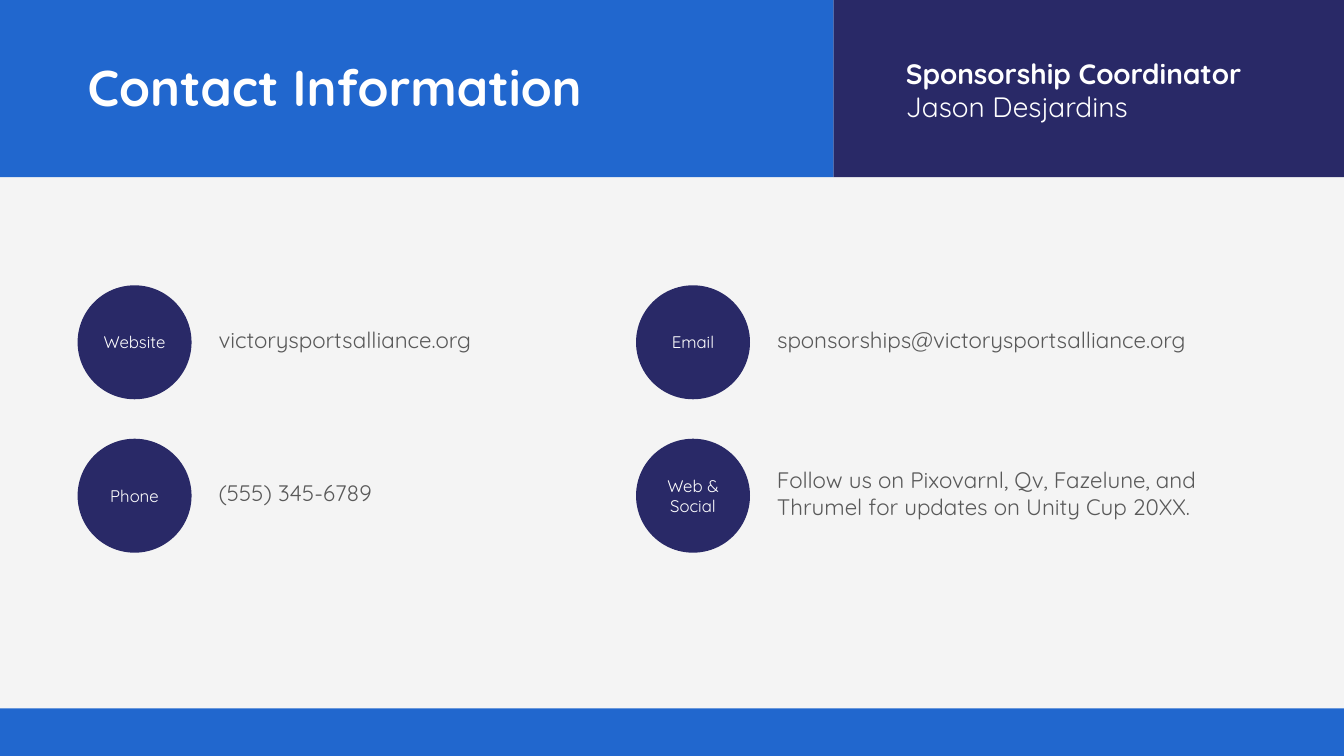
from pptx import Presentation
from pptx.dml.color import RGBColor
from pptx.enum.shapes import MSO_SHAPE
from pptx.enum.text import MSO_ANCHOR, MSO_AUTO_SIZE, PP_ALIGN
from pptx.util import Pt

RECTANGLE, OVAL = MSO_SHAPE.RECTANGLE, MSO_SHAPE.OVAL
MIDDLE, CENTER = MSO_ANCHOR.MIDDLE, PP_ALIGN.CENTER
GROW = MSO_AUTO_SIZE.SHAPE_TO_FIT_TEXT

TITLE = "Contact Information"
ROLE, PERSON = "Sponsorship Coordinator", "Jason Desjardins"
# Rows of (label, detail, detail width, detail lines)
CONTACTS = [
    [("Website", "victorysportsalliance.org", 256, 1),
     ("Email", "sponsorships@victorysportsalliance.org", 372, 1)],
    [("Phone", "(555) 345-6789", 195, 1),
     ("Web & Social", "Follow us on Pixovarnl, Qv, Fazelune, and "
      "Thrumel for updates on Unity Cup 20XX.", 346, 2)],
]


class Theme:
    font = "Quicksand"
    blue = RGBColor(0x21, 0x67, 0xCE)
    navy = RGBColor(0x29, 0x29, 0x67)
    paper = RGBColor(0xF4, 0xF4, 0xF4)
    grey = RGBColor(0x59, 0x59, 0x59)
    white = RGBColor(0xFF, 0xFF, 0xFF)
    title, person, detail, label = 36, 20, 16, 12


SLIDE_W, SLIDE_H = 960, 540
HEADER_H, FOOTER_H, TITLE_BAND_W = 126.5, 34, 595.4
LEFT, TOP = 55.44, 203.8
COLUMN_STEP, ROW_STEP = 398.9, 109.6
CIRCLE, DETAIL_OFFSET, DETAIL_RISE = 81.4, 93.6, 1.8
LINE_H, BOX_PADDING = 19.4, 7.2


def add_block(slide, kind, left, top, width, height, color):
    block = slide.shapes.add_shape(kind, Pt(left), Pt(top), Pt(width), Pt(height))
    block.shadow.inherit = False
    block.fill.solid()
    block.fill.fore_color.rgb = color
    block.line.fill.background()
    return block


def write(paragraph, text, size, color, bold=False):
    run = paragraph.add_run()
    run.text = text
    run.font.name = Theme.font
    run.font.size = Pt(size)
    run.font.bold = bold
    run.font.color.rgb = color


def add_text_frame(slide, left, top, width, height):
    box = slide.shapes.add_textbox(Pt(left), Pt(top), Pt(width), Pt(height))
    frame = box.text_frame
    frame.word_wrap = True
    frame.auto_size = GROW
    return frame


def add_header(slide):
    add_block(slide, RECTANGLE, TITLE_BAND_W, 0, SLIDE_W - TITLE_BAND_W,
              HEADER_H, Theme.navy)
    add_block(slide, RECTANGLE, 0, 0, TITLE_BAND_W, HEADER_H, Theme.blue)
    title = add_text_frame(slide, LEFT, 36.7, 407.5, 51)
    write(title.paragraphs[0], TITLE, Theme.title, Theme.white, bold=True)
    coordinator = add_text_frame(slide, 640, 36.7, 283.7, 55.4)
    write(coordinator.paragraphs[0], ROLE, Theme.person, Theme.white, bold=True)
    write(coordinator.add_paragraph(), PERSON, Theme.person, Theme.white)


def add_contact(slide, left, top, label, detail, width, lines):
    circle = add_block(slide, OVAL, left, top, CIRCLE, CIRCLE, Theme.navy)
    frame = circle.text_frame
    frame.word_wrap = True
    frame.vertical_anchor = MIDDLE
    frame.margin_left = frame.margin_right = 0
    frame.paragraphs[0].alignment = CENTER
    write(frame.paragraphs[0], label, Theme.label, Theme.white)

    height = lines * LINE_H + BOX_PADDING
    detail_top = top + (CIRCLE - height) / 2 - DETAIL_RISE
    detail_frame = add_text_frame(slide, left + DETAIL_OFFSET, detail_top,
                                  width, height)
    write(detail_frame.paragraphs[0], detail, Theme.detail, Theme.grey)


def main():
    deck = Presentation()
    deck.slide_width, deck.slide_height = Pt(SLIDE_W), Pt(SLIDE_H)
    slide = deck.slides.add_slide(deck.slide_layouts[6])
    slide.background.fill.solid()
    slide.background.fill.fore_color.rgb = Theme.paper

    add_header(slide)
    for row, contacts in enumerate(CONTACTS):
        for column, contact in enumerate(contacts):
            add_contact(slide, LEFT + column * COLUMN_STEP,
                        TOP + row * ROW_STEP, *contact)
    add_block(slide, RECTANGLE, 0, SLIDE_H - FOOTER_H, SLIDE_W, FOOTER_H,
              Theme.blue)
    deck.save("out.pptx")


if __name__ == "__main__":
    main()
